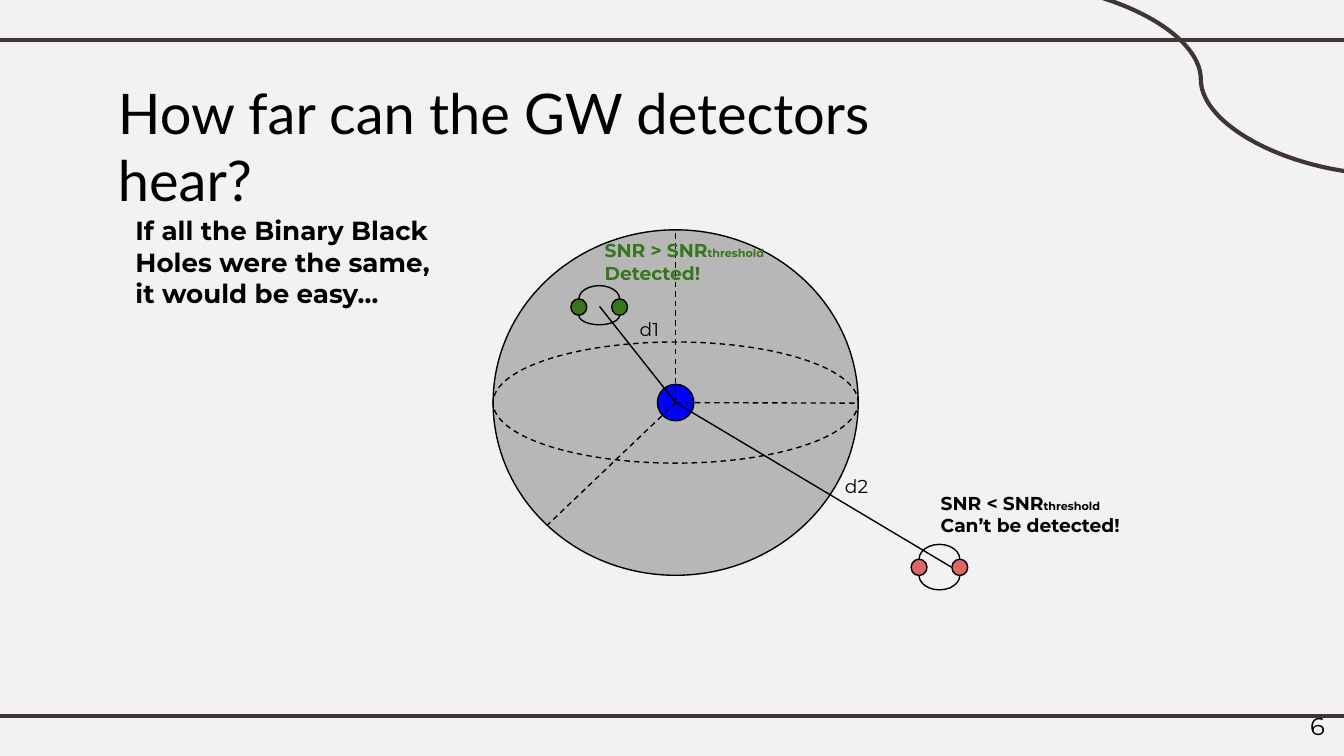
import pptx
import pptx.dml.color
import pptx.enum.dml
import pptx.enum.shapes
import pptx.enum.text
import pptx.oxml
import pptx.oxml.ns
import pptx.util
from pptx.dml.color import RGBColor
from pptx.util import Cm

BACKGROUND = RGBColor(0xF2, 0xF2, 0xF2)
BROWN = RGBColor(0x3F, 0x35, 0x33)
BLACK = RGBColor(0x00, 0x00, 0x00)
GREY = RGBColor(0xB7, 0xB7, 0xB7)
BLUE = RGBColor(0x00, 0x00, 0xFF)
GREEN = RGBColor(0x38, 0x76, 0x1D)
RED = RGBColor(0xE0, 0x66, 0x66)

SHAPE = pptx.enum.shapes.MSO_SHAPE
CONNECTOR = pptx.enum.shapes.MSO_CONNECTOR
DASH = pptx.enum.dml.MSO_LINE.DASH

deck = pptx.Presentation()
deck.slide_width, deck.slide_height = Cm(25.4), Cm(14.29)
page = deck.slides.add_slide(deck.slide_layouts[6])
page.background.fill.solid()
page.background.fill.fore_color.rgb = BACKGROUND


def add_outline(kind, start, extent, fill=None, color=BLACK, weight=0.75, dash=None):
    """Add a connector from start to extent, or a preset shape at start sized extent."""
    lengths = [Cm(value) for value in (*start, *extent)]
    if kind in (CONNECTOR.STRAIGHT, CONNECTOR.CURVE) and isinstance(kind, CONNECTOR):
        item = page.shapes.add_connector(kind, *lengths)
        item._element.spPr.append(pptx.oxml.parse_xml(
            "<a:effectLst %s/>" % pptx.oxml.ns.nsdecls("a")))
    else:
        item = page.shapes.add_shape(kind, *lengths)
        item.shadow.inherit = False
        if fill is None:
            item.fill.background()
        else:
            item.fill.solid()
            item.fill.fore_color.rgb = fill
    item.line.color.rgb = color
    item.line.width = pptx.util.Pt(weight)
    if dash is not None:
        item.line.dash_style = dash
    return item


def add_text(bounds, paragraphs, font="Montserrat", color=BLACK, bold=False):
    """Add a text box; each paragraph is a list of (text, point size) spans."""
    box = page.shapes.add_textbox(*[Cm(value) for value in bounds])
    frame = box.text_frame
    frame.word_wrap = True
    frame.margin_left = frame.margin_right = Cm(0.25)
    frame.margin_top = frame.margin_bottom = Cm(0.25)
    for index, spans in enumerate(paragraphs):
        para = frame.paragraphs[0] if index == 0 else frame.add_paragraph()
        for text, size in spans:
            span = para.add_run()
            span.text = text
            span.font.size = pptx.util.Pt(size)
            span.font.name = font
            span.font.bold = bold
            span.font.color.rgb = color
    return box


# Page frame and title
for rule_y in (0.76, 13.54):
    add_outline(CONNECTOR.STRAIGHT, (-0.2, rule_y), (25.6, rule_y), color=BROWN, weight=2.25)
add_outline(CONNECTOR.CURVE, (19.13, -0.3), (26.26, 3.3), color=BROWN, weight=2.25)
add_text((1.98, 1.24, 17.5, 1.6), [[("How far can the GW detectors hear?", 30)]], font="Lato")

# Detection sphere around the detector
center_x, center_y = 12.77, 7.61
center = (center_x, center_y)
sphere_width, sphere_height, equator_height, detector_size = 6.9, 6.53, 2.29, 0.69
for kind, width, height, fill, dash in (
    (SHAPE.OVAL, sphere_width, sphere_height, GREY, None),
    (SHAPE.OVAL, detector_size, detector_size, BLUE, None),
    (SHAPE.ARC, sphere_width, equator_height, None, DASH),
):
    ellipse = add_outline(kind, (center_x - width / 2, center_y - height / 2),
                          (width, height), fill, dash=dash)
ellipse.adjustments[0], ellipse.adjustments[1] = 1.53, 0.33
for axis_end in ((16.22, 7.62), (center_x, 4.34), (10.34, 9.93)):
    add_outline(CONNECTOR.STRAIGHT, center, axis_end, dash=DASH)

# Binary black holes: two dots joined by a half orbit above and below
dot_width, dot_height, separation = 0.3, 0.31, 0.77
half_turn = 108  # 180 degrees in arc adjustment units
for left, top, color, rise, drop in (
    (10.79, 5.65, GREEN, 0.25, 0.18),
    (17.22, 10.57, RED, 0.28, 0.27),
):
    for dot_left in (left, left + separation):
        add_outline(SHAPE.OVAL, (dot_left, top), (dot_width, dot_height), color)
    for edge, depth, angles in (
        (top, rise, (half_turn, 0)),
        (top + dot_height, drop, (0, half_turn)),
    ):
        orbit = add_outline(SHAPE.ARC, (left + dot_width / 2, edge - depth),
                            (separation, 2 * depth))
        orbit.adjustments[0], orbit.adjustments[1] = angles

# Labels and distances
add_text((17.53, 9.04, 4.01, 1.37),
         [[("SNR < SNR", 10), ("threshold ", 6), ("Can’t be detected!", 10)]], bold=True)
add_text((11.18, 4.27, 3.81, 1.37),
         [[("SNR > SNR", 10), ("threshold", 6)], [("Detected!", 10)]], color=GREEN, bold=True)
add_text((2.31, 3.81, 6.12, 2.9),
         [[("If all the Binary Black Holes were the same, it would be easy…", 14)]], bold=True)
for name, binary, label_left, label_top in (
    ("d1", (11.33, 5.79), 11.84, 5.79),
    ("d2", (17.98, 10.72), 15.72, 8.76),
):
    add_outline(CONNECTOR.STRAIGHT, center, binary)
    add_text((label_left, label_top, 1.24, 0.94), [[(name, 10)]])

number = add_text((23.77, 13.18, 1.52, 1.09), [[("6", 13)]])
number.text_frame.vertical_anchor = pptx.enum.text.MSO_ANCHOR.MIDDLE
number.text_frame.paragraphs[0].alignment = pptx.enum.text.PP_ALIGN.RIGHT

deck.save("out.pptx")
